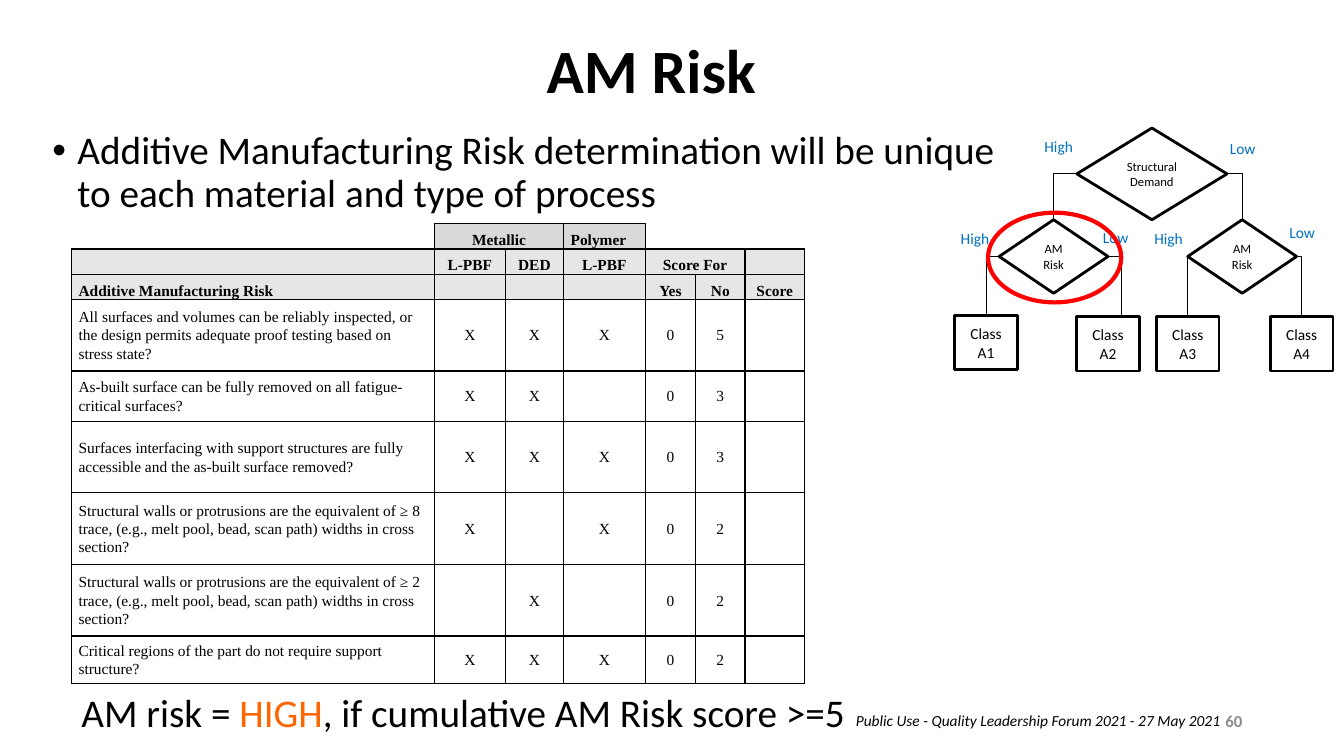
"""Build the AM Risk slide with its score table and class tree."""
from dataclasses import dataclass
from typing import Any, Optional

from lxml.etree import SubElement
from pptx import Presentation
from pptx.dml.color import RGBColor
from pptx.enum.shapes import MSO_CONNECTOR, MSO_SHAPE
from pptx.enum.text import MSO_ANCHOR, MSO_AUTO_SIZE, PP_ALIGN
from pptx.oxml.ns import qn
from pptx.util import Inches, Pt

BLACK = RGBColor(0, 0, 0)
GRAY = RGBColor(0x8C, 0x8C, 0x8C)
BLUE = RGBColor(0x00, 0x70, 0xC0)
RED = RGBColor(0xFF, 0, 0)
ORANGE = RGBColor(0xFF, 0x66, 0)
HEAD = RGBColor(0xD9, 0xD9, 0xD9)
PALE = RGBColor(0xE7, 0xE6, 0xE6)
SANS, SERIF = "Calibri", "Times New Roman"
Area = tuple[float, float, float, float]


@dataclass
class Node:
    text: str
    area: Area
    kind: Any = MSO_SHAPE.FLOWCHART_DECISION
    size: int = 9


@dataclass
class Link:
    start: tuple[float, float]
    stop: tuple[float, float]
    ends: Optional[tuple[str, str]] = None


@dataclass
class Label:
    runs: list[tuple[str, RGBColor]]
    area: Area
    style: dict[str, Any]


NODES = {
    "top": Node("Structural Demand", (10.68, 1.27, 1.49, 0.91)),
    "left": Node("AM Risk", (9.91, 2.18, 1.08, 0.73)),
    "right": Node("AM Risk", (11.78, 2.18, 1.08, 0.73)),
} | {
    name: Node(f"Class\n{name}", (left, top, 0.62, 0.54), MSO_SHAPE.FLOWCHART_PROCESS, 11)
    for name, left, top in [("A2", 10.68, 3.14), ("A4", 12.6, 3.14),
                            ("A3", 11.47, 3.14), ("A1", 9.47, 3.13)]
}
RING = Node("", (9.8, 2.11, 1.32, 0.89), MSO_SHAPE.OVAL)
LINKS = [
    Link((10.68, 1.72), (10.45, 2.18)),
    Link((12.16, 1.72), (12.32, 2.18)),
    Link((9.91, 2.54), (9.78, 3.13)),
    Link((10.99, 2.54), (11.12, 3.13)),
    Link((11.78, 2.54), (11.78, 3.14), ("right", "A3")),
    Link((12.86, 2.54), (12.91, 3.14)),
]
SMALL = {"size": Pt(11), "name": SANS}
LARGE = {"size": Pt(28), "name": SANS}
TAGS = [
    Label([(word, BLUE)], (left, top, 0.49 if word == "High" else 0.46, 0.29), SMALL)
    for word, left, top in [
        ("High", 10.26, 1.31), ("High", 9.43, 2.22), ("High", 11.35, 2.22),
        ("Low", 12.1, 1.33), ("Low", 10.84, 2.21), ("Low", 12.69, 2.16)]
]
RULE = Label([("AM risk = ", BLACK), ("HIGH", ORANGE),
              (", if cumulative AM Risk score >=5", BLACK)], (0.71, 6.78, 7.87, 0.57), LARGE)
FOOT = Label([("Public Use - Quality Leadership Forum 2021 - 27 May 2021", BLACK)],
             (8.39, 7.01, 3.84, 0.29), SMALL | {"italic": True})

COLS = [3.6, 0.7, 0.58, 0.81, 0.5, 0.49, 0.59]
ROWS = [0.25, 0.25, 0.25, 0.71, 0.5, 0.71, 0.71, 0.71, 0.47]
MERGES = [(0, 1, 2), (0, 4, 6), (1, 4, 5)]
WALLS = ("Structural walls or protrusions are the equivalent of ≥ {} trace, "
         "(e.g., melt pool, bead, scan path) widths in cross section?")
CELLS = [
    ["", "Metallic", "", "Polymer", "", "", ""],
    ["", "L-PBF", "DED", "L-PBF", "Score For", "", ""],
    ["Additive Manufacturing Risk", "", "", "", "Yes", "No", "Score"],
    ["All surfaces and volumes can be reliably inspected, or the design permits "
     "adequate proof testing based on stress state?", "X", "X", "X", "0", "5", ""],
    ["As-built surface can be fully removed on all fatigue-critical surfaces?",
     "X", "X", "", "0", "3", ""],
    ["Surfaces interfacing with support structures are fully accessible and the "
     "as-built surface removed?", "X", "X", "X", "0", "3", ""],
    [WALLS.format(8), "X", "", "X", "0", "2", ""],
    [WALLS.format(2), "", "X", "", "0", "2", ""],
    ["Critical regions of the part do not require support structure?",
     "X", "X", "X", "0", "2", ""],
]


def assign(item: Any, style: dict[str, Any]) -> None:
    for key, value in style.items():
        setattr(item, key, value)


def write(para: Any, text: str, color: RGBColor, style: dict[str, Any]) -> None:
    run = para.add_run()
    run.text = text
    assign(run.font, style)
    run.font.color.rgb = color


def add_box(slide: Any, area: Area) -> Any:
    return slide.shapes.add_textbox(*map(Inches, area)).text_frame


def add_label(slide: Any, label: Label) -> None:
    frame = add_box(slide, label.area)
    assign(frame, {"word_wrap": False, "auto_size": MSO_AUTO_SIZE.SHAPE_TO_FIT_TEXT})
    for text, color in label.runs:
        write(frame.paragraphs[0], text, color, label.style)


def add_node(slide: Any, node: Node, color: RGBColor = BLACK, weight: float = 2) -> Any:
    shape = slide.shapes.add_shape(node.kind, *map(Inches, node.area))
    shape.shadow.inherit = False
    shape.fill.background()
    shape.line.color.rgb = color
    shape.line.width = Pt(weight)
    frame = shape.text_frame
    assign(frame, {"word_wrap": True, "vertical_anchor": MSO_ANCHOR.MIDDLE})
    for index, text in enumerate(node.text.splitlines()):
        para = frame.add_paragraph() if index else frame.paragraphs[0]
        para.alignment = PP_ALIGN.CENTER
        write(para, text, BLACK, {"size": Pt(node.size), "name": SANS})
    return shape


def add_link(slide: Any, link: Link, shapes: dict[str, Any]) -> None:
    kind = MSO_CONNECTOR.STRAIGHT if link.ends else MSO_CONNECTOR.ELBOW
    line = slide.shapes.add_connector(kind, *map(Inches, link.start + link.stop))
    line.line.color.rgb = BLACK
    line.line.width = Pt(0.5)
    props = line._element.spPr
    SubElement(props, qn("a:effectLst"))
    if link.ends:
        line.begin_connect(shapes[link.ends[0]], 1)
        line.end_connect(shapes[link.ends[1]], 0)
    else:
        props.find(qn("a:prstGeom")).set("prst", "bentConnector2")


def add_cell(cell: Any, text: str, row: int, col: int) -> None:
    blank = row == 0 and col not in (1, 2, 3)
    sides = {0: "RB", 4: "LB"}.get(col, "B") if blank else "LRTB"
    for side in "LRTB":
        edge = SubElement(cell._tc.get_or_add_tcPr(), qn(f"a:ln{side}"), w=str(Pt(1)))
        fill = SubElement(edge, qn("a:solidFill" if side in sides else "a:noFill"))
        if side in sides:
            SubElement(fill, qn("a:srgbClr"), val=str(BLACK))
    if blank or row > 2:
        cell.fill.background()
    else:
        cell.fill.solid()
        cell.fill.fore_color.rgb = PALE if row else HEAD
    assign(cell, {"margin_left": Inches(0.07), "margin_right": Inches(0.07),
                  "margin_top": 0, "margin_bottom": 0,
                  "vertical_anchor": MSO_ANCHOR.MIDDLE if row > 2 else MSO_ANCHOR.BOTTOM})
    para = cell.text_frame.paragraphs[0]
    start = col == 0 or text == "Polymer"
    assign(para, {"alignment": PP_ALIGN.LEFT if start else PP_ALIGN.CENTER, "line_spacing": 1.07})
    if text:
        write(para, text, BLACK, {"size": Pt(11), "name": SERIF, "bold": row < 3})
    else:
        SubElement(para._p, qn("a:endParaRPr"), sz="1100")


def add_grid(slide: Any) -> None:
    area = 0.71, 2.22, sum(COLS), sum(ROWS)
    table = slide.shapes.add_table(len(ROWS), len(COLS), *map(Inches, area)).table
    assign(table, {"first_row": False, "horz_banding": False})
    for col, width in enumerate(COLS):
        table.columns[col].width = Inches(width)
    for row, texts in enumerate(CELLS):
        table.rows[row].height = Inches(ROWS[row])
        for col, text in enumerate(texts):
            add_cell(table.cell(row, col), text, row, col)
    for row, first, last in MERGES:
        table.cell(row, first).merge(table.cell(row, last))


def add_heads(slide: Any) -> None:
    title = slide.shapes.title
    assign(title, {"left": Inches(0.71), "top": 0, "width": Inches(11.5), "height": Inches(1.45)})
    title.text_frame.vertical_anchor = MSO_ANCHOR.MIDDLE
    para = title.text_frame.paragraphs[0]
    assign(para, {"alignment": PP_ALIGN.CENTER, "line_spacing": 0.9})
    write(para, "AM Risk", BLACK, {"size": Pt(44), "name": SANS, "bold": True})
    body = add_box(slide, (0.42, 1.25, 9.75, 1.58))
    body.word_wrap = True
    para = body.paragraphs[0]
    para.line_spacing = 0.9
    props = para._p.get_or_add_pPr()
    props.set("marL", str(Inches(0.25)))
    props.set("indent", str(Inches(-0.25)))
    SubElement(props, qn("a:buFont"), typeface="Arial")
    SubElement(props, qn("a:buChar"), char="•")
    write(para, "Additive Manufacturing Risk determination will be unique to each "
          "material and type of process", BLACK, LARGE)
    page = add_box(slide, (9.42, 6.95, 3, 0.4))
    assign(page, {"word_wrap": True, "vertical_anchor": MSO_ANCHOR.MIDDLE})
    page.paragraphs[0].alignment = PP_ALIGN.RIGHT
    write(page.paragraphs[0], "60", GRAY, {"size": Pt(12), "name": SANS, "bold": True})


def main() -> None:
    deck = Presentation()
    assign(deck, {"slide_width": Inches(13.33), "slide_height": Inches(7.5)})
    slide = deck.slides.add_slide(deck.slide_layouts[5])
    add_heads(slide)
    add_label(slide, RULE)
    shapes = {name: add_node(slide, node) for name, node in NODES.items()}
    for link in LINKS:
        add_link(slide, link, shapes)
    for tag in TAGS:
        add_label(slide, tag)
    add_node(slide, RING, RED, 3)
    add_grid(slide)
    add_label(slide, FOOT)
    deck.save("out.pptx")


if __name__ == "__main__":
    main()
